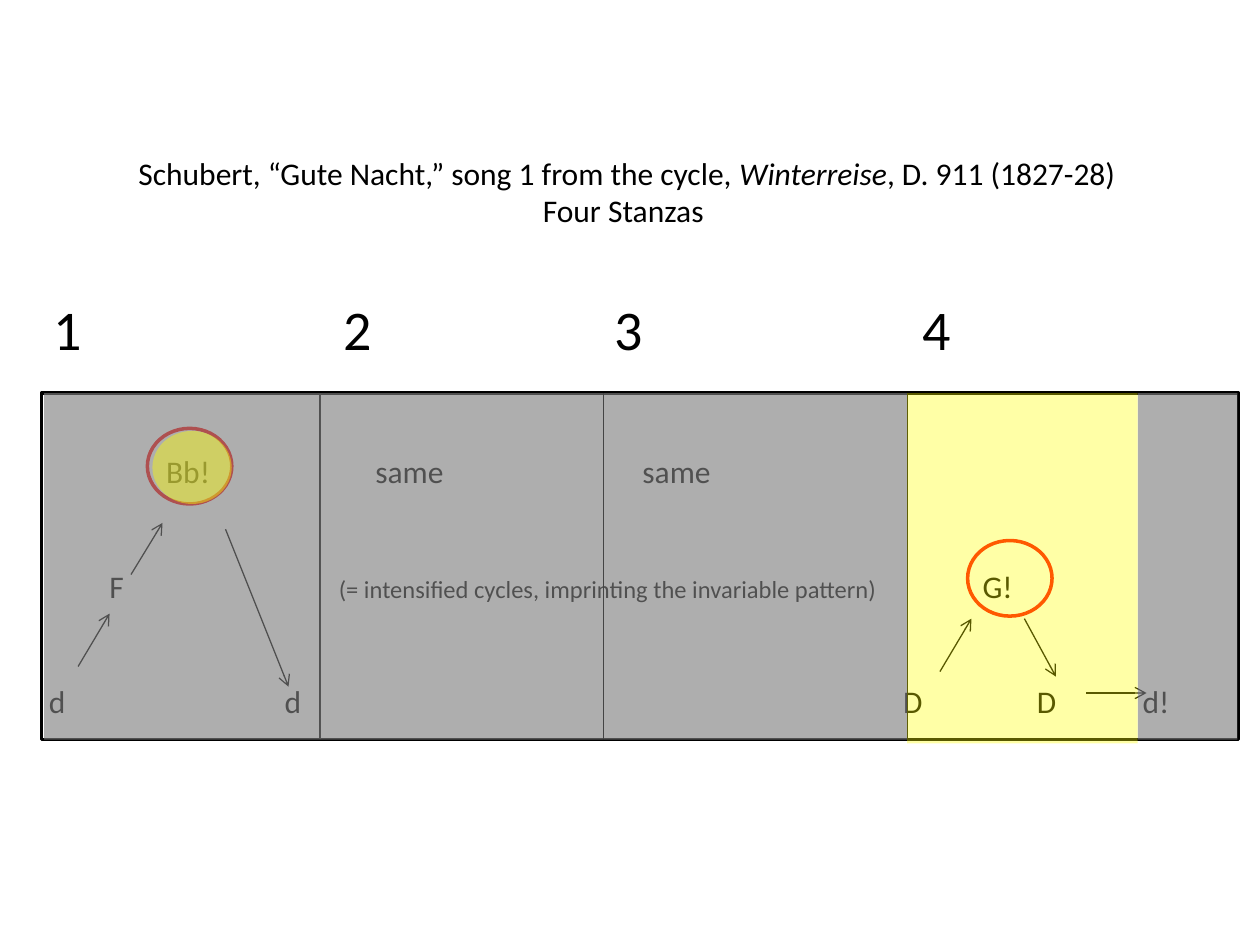
from pptx import Presentation
from pptx.dml.color import RGBColor
from pptx.enum.shapes import MSO_CONNECTOR, MSO_SHAPE
from pptx.enum.text import MSO_AUTO_SIZE, PP_ALIGN
from pptx.oxml.ns import qn
from pptx.util import Inches, Pt
from lxml.etree import SubElement

BLACK = RGBColor(0x00, 0x00, 0x00)
RED = RGBColor(0xFF, 0x00, 0x00)
GRAY = RGBColor(0x80, 0x80, 0x80)
YELLOW = RGBColor(0xFF, 0xFF, 0x00)


class StanzaSlide:
    font_name = "Calibri"
    text_size = 18

    def __init__(self, presentation):
        self.slide = presentation.slides.add_slide(presentation.slide_layouts[6])

    def outline(self, kind, box, color):
        shape = self.slide.shapes.add_shape(kind, *map(Inches, box))
        shape.shadow.inherit = False
        shape.fill.background()
        shape.line.color.rgb = color
        shape.line.width = Pt(2)

    def veil(self, kind, box, color, opacity):
        shape = self.slide.shapes.add_shape(kind, *map(Inches, box))
        shape.shadow.inherit = False
        shape.line.fill.background()
        shape.fill.solid()
        shape.fill.fore_color.rgb = color
        color_element = shape.fill._xPr.find(qn("a:solidFill"))[0]
        SubElement(color_element, qn("a:alpha"), val=str(opacity * 1000))

    def line(self, start, end, arrow=False):
        connector = self.slide.shapes.add_connector(
            MSO_CONNECTOR.STRAIGHT, *map(Inches, start + end))
        connector.line.color.rgb = BLACK
        connector.line.width = Pt(0.75)
        properties = connector._element.spPr
        if arrow:
            SubElement(properties.find(qn("a:ln")), qn("a:tailEnd"), type="arrow")
        SubElement(properties, qn("a:effectLst"))

    def text(self, box, paragraphs, alignment=PP_ALIGN.LEFT, gap=0):
        shape = self.slide.shapes.add_textbox(*map(Inches, box))
        frame = shape.text_frame
        frame.word_wrap = True
        frame.auto_size = MSO_AUTO_SIZE.SHAPE_TO_FIT_TEXT
        for index, (runs, stops) in enumerate(paragraphs):
            paragraph = frame.add_paragraph() if index else frame.paragraphs[0]
            paragraph.alignment = alignment
            if index and gap:
                paragraph.space_before = Pt(gap)
            self.tab_stops(paragraph, stops)
            for words, size, italic in runs:
                run = paragraph.add_run()
                run.text = words
                run.font.name = self.font_name
                run.font.size = Pt(size)
                run.font.italic = italic
                run.font.color.rgb = BLACK

    def tab_stops(self, paragraph, stops):
        if stops:
            tab_list = SubElement(paragraph._p.get_or_add_pPr(), qn("a:tabLst"))
            for stop in stops:
                SubElement(tab_list, qn("a:tab"), pos=str(Inches(stop)), algn="l")


def main():
    presentation = Presentation()
    presentation.slide_width = Inches(10)
    presentation.slide_height = Inches(7.5)
    page = StanzaSlide(presentation)
    size = page.text_size

    top, height = 3.12, 2.75
    dividers = [2.54, 4.79, 7.2]
    page.outline(MSO_SHAPE.RECTANGLE, (0.33, top, 9.5, height), BLACK)
    for x in dividers:
        page.line((x, top), (x, top + height))

    page.text((0.85, 1.17, 8.25, 0.71), [
        ([("Schubert, “Gute Nacht,” song 1 from the cycle, ", size, False),
          ("Winterreise", size, True),
          (", D. 911 (1827-28)", size, False)], []),
        ([("Four Stanzas ", size, False)], []),
    ], PP_ALIGN.CENTER)
    page.text((0.33, 2.29, 9.21, 0.64), [
        ([("1\t2\t3\t4", 32, False)], [2.3, 4.45, 6.89]),
    ])
    page.text((0.29, 3.54, 9.25, 2.2), [
        ([("\tBb!\tsame\tsame", size, False)], [0.93, 2.59, 4.71]),
        ([("\tF\t", size, False),
          ("(= intensified cycles, imprinting the invariable pattern)\t", 14, False),
          ("G!", size, False)], [0.48, 2.3, 7.41]),
        ([("d\td\tD\tD\td!", size, False)], [1.87, 6.78, 7.84, 8.68]),
    ], gap=44)

    for left, circle_top in [(1.17, 3.4), (7.68, 4.29)]:
        page.outline(MSO_SHAPE.OVAL, (left, circle_top, 0.67, 0.6), RED)

    arrows = [
        ((0.62, 5.29), (0.87, 4.87)),
        ((1.04, 4.56), (1.29, 4.15)),
        ((1.79, 4.2), (2.29, 5.45)),
        ((7.46, 5.33), (7.71, 4.91)),
        ((8.13, 4.91), (8.38, 5.37)),
        ((8.62, 5.5), (9.1, 5.5)),
    ]
    for start, end in arrows:
        page.line(start, end, arrow=True)

    gray_spans = list(zip([0.35] + dividers[:2], dividers)) + [(9.03, 9.82)]
    for left, right in gray_spans:
        page.veil(MSO_SHAPE.RECTANGLE, (left, top, right - left, height), GRAY, 63)
    page.veil(MSO_SHAPE.OVAL, (1.21, 3.42, 0.63, 0.58), YELLOW, 42)
    page.veil(MSO_SHAPE.RECTANGLE, (dividers[2], top, 1.83, 2.78), YELLOW, 35)

    presentation.save("out.pptx")


if __name__ == "__main__":
    main()
